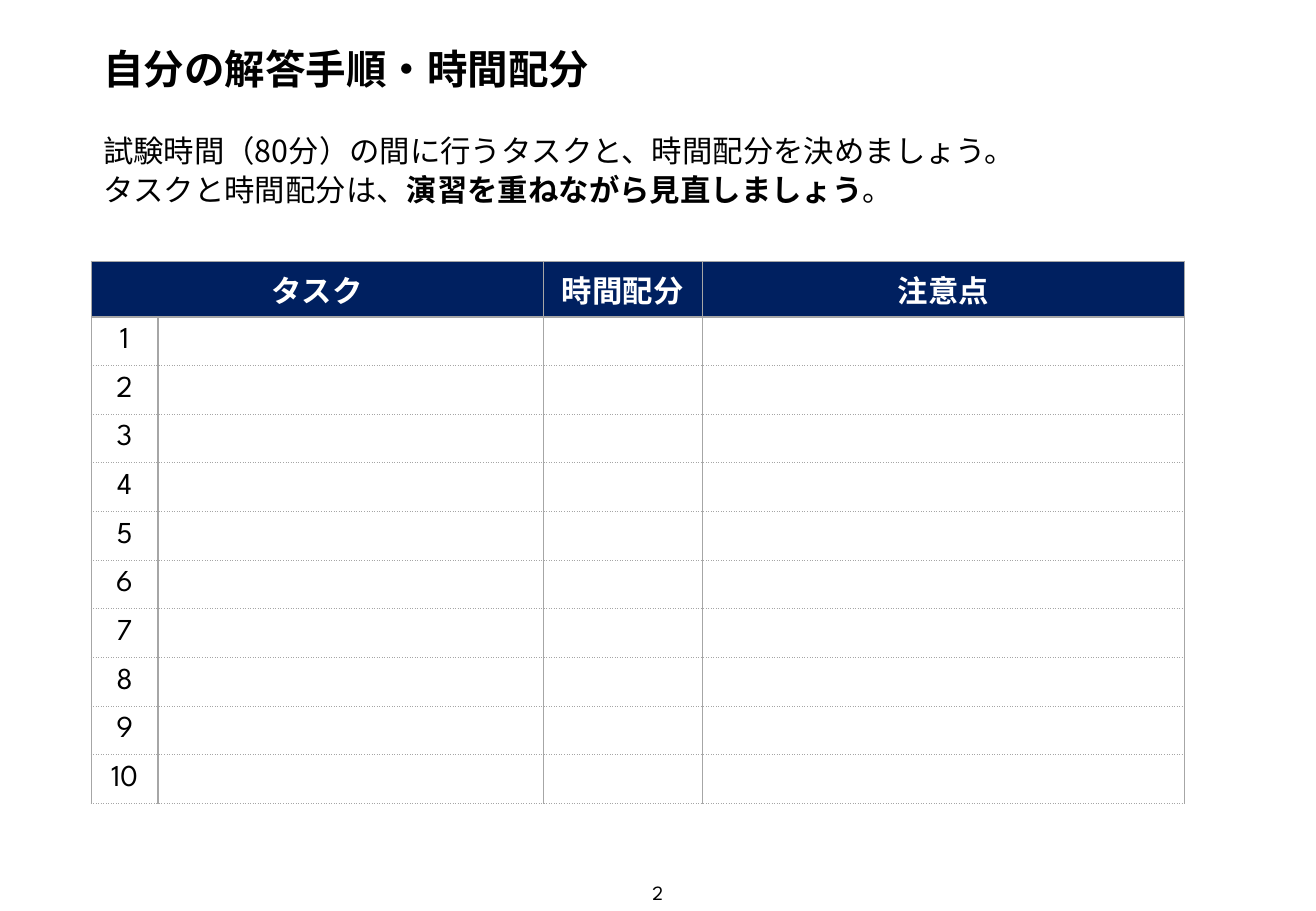
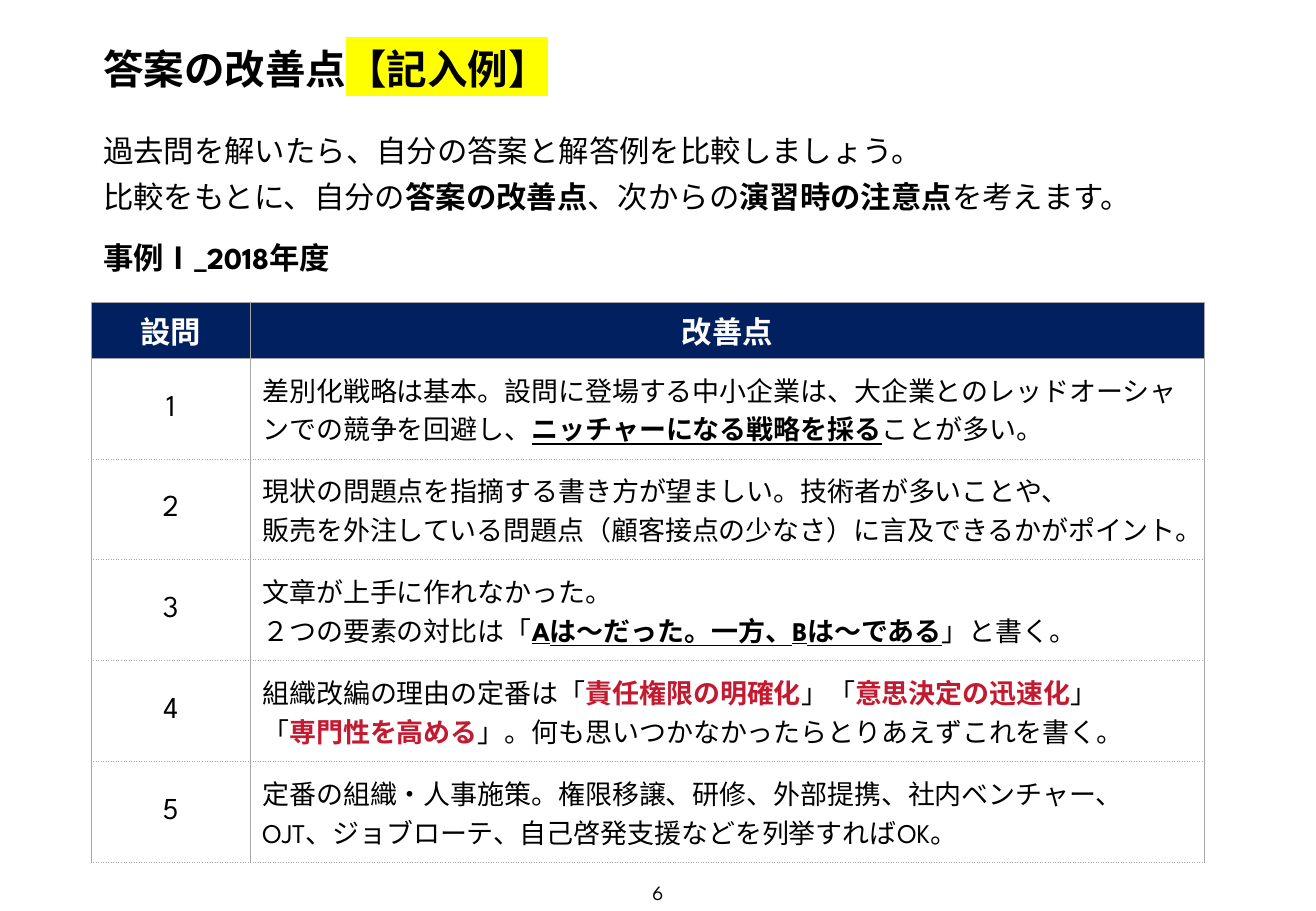
from dataclasses import dataclass

from lxml import etree
from pptx import Presentation
from pptx.dml.color import RGBColor
from pptx.enum.text import MSO_ANCHOR, PP_ALIGN
from pptx.oxml.ns import qn
from pptx.util import Inches, Pt

LEFT, CENTER = PP_ALIGN.LEFT, PP_ALIGN.CENTER
TOP, MIDDLE = MSO_ANCHOR.TOP, MSO_ANCHOR.MIDDLE


@dataclass(frozen=True)
class Theme:
    text: str = "000000"
    inverse: str = "FFFFFF"
    header: str = "002060"
    rule: str = "A6A6A6"
    accent: str = "C41A30"
    marker: str = "FFFF00"
    latin: str = "League Spartan"
    japanese: str = "Noto Sans CJK JP"
    title_size: int = 24
    body_size: int = 18
    note_size: int = 16
    page_size: int = 12
    rule_width: float = 0.75


@dataclass(frozen=True)
class Box:
    left: float
    top: float
    width: float
    height: float

    def inches(self):
        return [Inches(v) for v in (self.left, self.top, self.width, self.height)]


THEME = Theme()
WIDTH, HEIGHT = 10.83, 7.5
MARGIN = 0.75
CONTENT_WIDTH = 9.34
TITLE_BOX = Box(MARGIN, 0.33, CONTENT_WIDTH, 0.5)
LEAD_BOX = Box(MARGIN, 1.03, CONTENT_WIDTH, 0.76)
CASE_BOX = Box(MARGIN, 1.92, 2.6, 0.4)
PAGE_BOX = Box((WIDTH - 2.44) / 2, HEIGHT - 0.3, 2.44, 0.3)
HEADER_HEIGHT = 0.46
NARROW_COLUMN = 1.31

# Run formats
BOLD = {"bold": True}
KEY = {"bold": True, "underline": True}
ACCENT = {"bold": True, "color": THEME.accent}
MARKED = {"highlight": THEME.marker}


def format_run(run, size, color, face, bold=False, underline=False, highlight=None):
    font = run.font
    font.size, font.bold, font.underline = Pt(size), bold, underline
    font.color.rgb = RGBColor.from_string(color)
    properties = run._r.get_or_add_rPr()
    if highlight:
        mark = etree.SubElement(properties, qn("a:highlight"))
        etree.SubElement(mark, qn("a:srgbClr"), val=highlight)
    font.name = face
    etree.SubElement(properties, qn("a:ea"), typeface=THEME.japanese)


def write_text(frame, paragraphs, size=THEME.body_size, color=THEME.text,
               face=THEME.latin, bold=False, align=LEFT, spacing=None, before=0):
    """Each paragraph is a list of strings or (string, format) pairs; "\\n" breaks a line."""
    frame.word_wrap = True
    for index, pieces in enumerate(paragraphs):
        paragraph = frame.add_paragraph() if index else frame.paragraphs[0]
        paragraph.alignment = align
        if spacing:
            paragraph.line_spacing = Pt(spacing)
        if index and before:
            paragraph.space_before = Pt(before)
        for piece in pieces:
            text, changes = (piece, {}) if isinstance(piece, str) else piece
            style = {"size": size, "color": color, "face": face, "bold": bold, **changes}
            for line_index, line in enumerate(text.split("\n")):
                if line_index:
                    paragraph.add_line_break()
                run = paragraph.add_run()
                run.text = line
                format_run(run, **style)


def add_text(slide, box, paragraphs, anchor=MIDDLE, **style):
    frame = slide.shapes.add_textbox(*box.inches()).text_frame
    frame.vertical_anchor = anchor
    write_text(frame, paragraphs, **style)


def set_borders(cell, top_dash, bottom_dash):
    properties = cell._tc.get_or_add_tcPr()
    sides = {"lnL": "solid", "lnR": "solid", "lnT": top_dash, "lnB": bottom_dash}
    for side, dash in sides.items():
        line = etree.SubElement(properties, qn(f"a:{side}"), w=str(Pt(THEME.rule_width)))
        fill = etree.SubElement(line, qn("a:solidFill"))
        etree.SubElement(fill, qn("a:srgbClr"), val=THEME.rule)
        etree.SubElement(line, qn("a:prstDash"), val=dash)


def fill_cell(cell, paragraphs, row, **style):
    set_borders(cell, "solid" if row < 2 else "sysDot", "sysDot" if row else "solid")
    if row:
        cell.fill.background()
    else:
        cell.fill.solid()
        cell.fill.fore_color.rgb = RGBColor.from_string(THEME.header)
    cell.vertical_anchor = MIDDLE
    if paragraphs:
        write_text(cell.text_frame, paragraphs, **style)
    else:
        cell.margin_top = cell.margin_bottom = 0


def add_grid(slide, box, columns, headers, rows):
    """Header row plus equal body rows; the first body column holds the numbers."""
    table = slide.shapes.add_table(len(rows) + 1, len(columns), *box.inches()).table
    table.first_row = table.horz_banding = False
    for column, width in zip(table.columns, columns):
        column.width = Inches(width)
    row_height = (box.height - HEADER_HEIGHT) / len(rows)
    for index, row in enumerate(table.rows):
        row.height = Inches(row_height if index else HEADER_HEIGHT)

    for column, header in enumerate(headers):
        fill_cell(table.cell(0, column), [[header]] if header else None, 0,
                  color=THEME.inverse, bold=True, align=CENTER)
    for number, notes in enumerate(rows, start=1):
        fill_cell(table.cell(number, 0), [[str(number)]], number, align=CENTER)
        for column, note in enumerate(notes, start=1):
            fill_cell(table.cell(number, column), note, number, size=THEME.note_size)
    return table


def add_page(presentation, number, title, lead, lead_spacing):
    """Blank slide with the shared title, lead text and page number."""
    slide = presentation.slides.add_slide(presentation.slide_layouts[6])
    add_text(slide, TITLE_BOX, [title], size=THEME.title_size, bold=True,
             face=THEME.japanese, spacing=26)
    add_text(slide, LEAD_BOX, lead, face=THEME.japanese, spacing=lead_spacing, before=3)
    add_text(slide, PAGE_BOX, [[str(number)]], size=THEME.page_size, align=CENTER)
    return slide


def build_time_plan(presentation):
    slide = add_page(
        presentation, 2, ["自分の解答手順・時間配分"],
        [["試験時間（80分）の間に行うタスクと、時間配分を決めましょう。"],
         ["タスクと時間配分は、", ("演習を重ねながら見直しましょう", BOLD), "。"]],
        lead_spacing=20)
    columns = [0.55, 3.17, NARROW_COLUMN, 3.97]
    task_count = 10
    box = Box(MARGIN, 2.15, sum(columns), HEADER_HEIGHT + 0.4 * task_count)
    table = add_grid(slide, box, columns, ["タスク", None, "時間配分", "注意点"],
                     [[None] * 3] * task_count)
    table.cell(0, 0).merge(table.cell(0, 1))


def build_improvements(presentation):
    slide = add_page(
        presentation, 6, ["答案の改善点", ("【記入例】", MARKED)],
        [["過去問を解いたら、自分の答案と解答例を比較しましょう。"],
         ["比較をもとに、自分の", ("答案の改善点", BOLD), "、次からの",
          ("演習時の注意点", BOLD), "を考えます。"]],
        lead_spacing=24)
    notes = [
        [["差別化戦略は基本。設問に登場する中小企業は、大企業とのレッドオーシャンでの競争を回避し、",
          ("ニッチャーになる戦略を採る", KEY), "ことが多い。"]],
        [["現状の問題点を指摘する書き方が望ましい。技術者が多いことや、\n"
          "販売を外注している問題点（顧客接点の少なさ）に言及できるかがポイント。"]],
        [["文章が上手に作れなかった。"],
         ["２つの要素の対比は「", ("Aは～だった。一方、Bは～である", KEY), "」と書く。"]],
        [["組織改編の理由の定番は「", ("責任権限の明確化", ACCENT), "」「",
          ("意思決定の迅速化", ACCENT), "」\n「", ("専門性を高める", ACCENT),
          "」。何も思いつかなかったらとりあえずこれを書く。"]],
        [["定番の組織・人事施策。権限移譲、研修、外部提携、社内ベンチャー、\n"
          "OJT、ジョブローテ、自己啓発支援などを列挙すればOK。"]],
    ]
    columns = [NARROW_COLUMN, 7.85]
    box = Box(MARGIN, 2.49, sum(columns), HEADER_HEIGHT + 0.83 * len(notes))
    add_grid(slide, box, columns, ["設問", "改善点"], [[note] for note in notes])
    add_text(slide, CASE_BOX, [["事例Ⅰ_2018年度"]], anchor=TOP, bold=True)


def main():
    presentation = Presentation()
    presentation.slide_width = Inches(WIDTH)
    presentation.slide_height = Inches(HEIGHT)
    build_time_plan(presentation)
    build_improvements(presentation)
    presentation.save("out.pptx")


if __name__ == "__main__":
    main()
